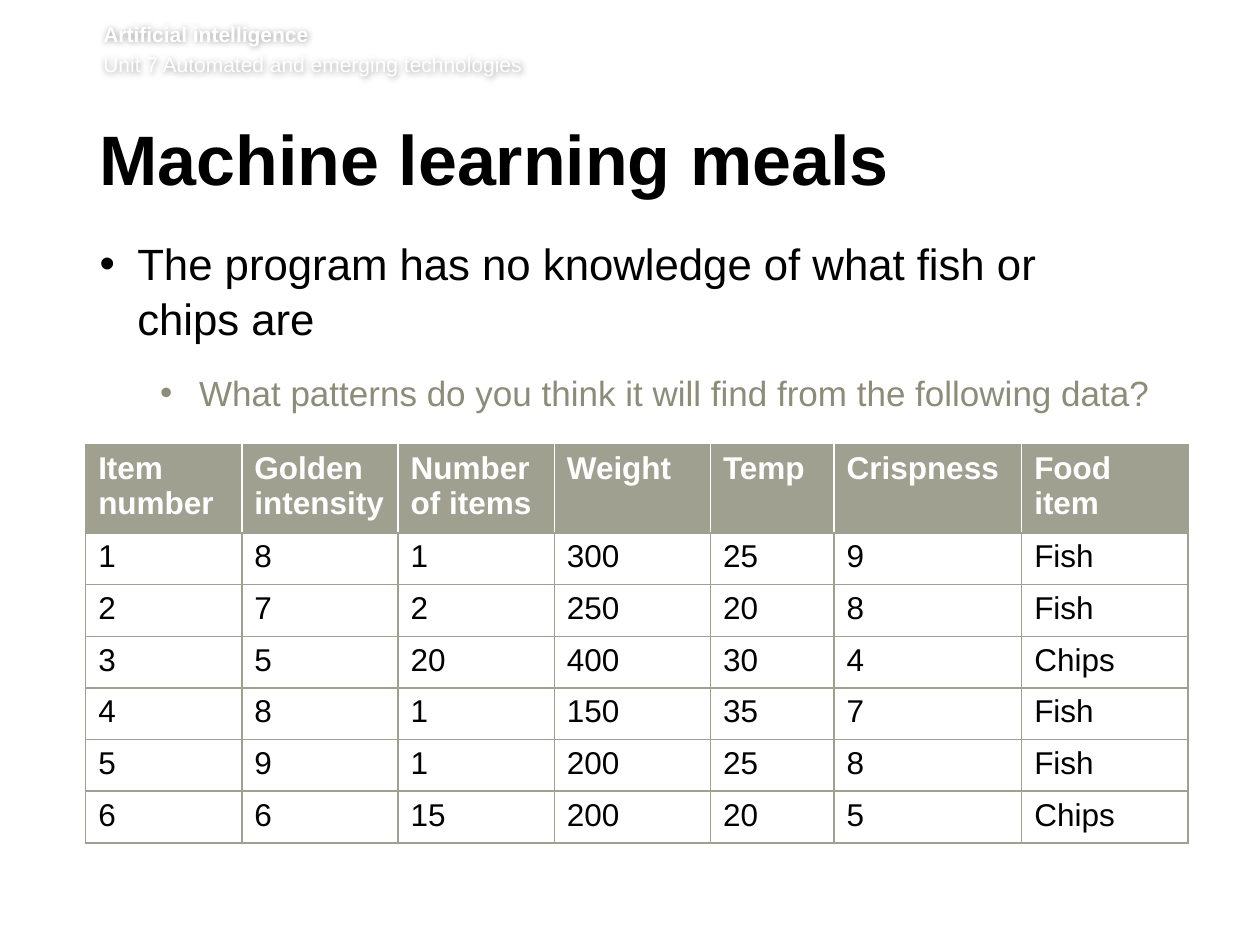
from lxml.etree import SubElement
from pptx import Presentation
from pptx.dml.color import RGBColor
from pptx.oxml.ns import qn
from pptx.util import Inches, Pt

COLORS = {"white": "FFFFFF", "black": "000000", "sage": "A0A090", "olive": "8C8C78"}


def add_text(paragraph, text, size, color, bold=False):
    run = paragraph.add_run()
    run.text = text
    run.font.name = "Arial"
    run.font.size = Pt(size)
    run.font.bold = bold
    run.font.color.rgb = RGBColor.from_string(COLORS[color])


def add_frame(left, top, width, height, insets):
    box = slide.shapes.add_textbox(Inches(left), Inches(top), Inches(width), Inches(height))
    frame = box.text_frame
    frame.word_wrap = True
    frame.margin_left, frame.margin_top, frame.margin_right, frame.margin_bottom = map(Inches, insets)
    return box, frame


prs = Presentation()
prs.slide_width, prs.slide_height = Inches(10), Inches(7.5)
slide = prs.slides.add_slide(prs.slide_layouts[6])

banner, banner_frame = add_frame(0.82, 0.17, 8.82, 0.49, (0, 0, 0, 0.05))
topic = banner_frame.paragraphs[0]
add_text(topic, "Artificial intelligence", 12, "white", True)
unit = banner_frame.add_paragraph()
unit.space_before = Pt(2.9)
add_text(unit, "Unit 7 Automated and emerging technologies", 12, "white")
effects = SubElement(banner.element.spPr, qn("a:effectLst"))
glow = SubElement(effects, qn("a:outerShdw"), blurRad="50800", dist="0", algn="ctr", rotWithShape="0")
glow_color = SubElement(glow, qn("a:srgbClr"), val=COLORS["black"])
SubElement(glow_color, qn("a:alpha"), val="40000")

_, title_frame = add_frame(0.79, 0.99, 8.55, 0.73, (0, 0.05, 0.1, 0.05))
title = title_frame.paragraphs[0]
title.line_spacing = Pt(39)
title.space_after = Pt(15)
add_text(title, "Machine learning meals", 40, "black", True)

_, body_frame = add_frame(0.79, 1.86, 8.53, 3.78, (0, 0, 0.1, 0.05))
statement = body_frame.paragraphs[0]
question = body_frame.add_paragraph()
question.level = 1
for bullet, margin, indent, after in ((statement, 0.3, -0.3, 14), (question, 0.79, -0.31, 12)):
    properties = bullet._p.get_or_add_pPr()
    properties.set("marL", str(Inches(margin)))
    properties.set("indent", str(Inches(indent)))
    SubElement(properties, qn("a:buFont"), typeface="Arial")
    SubElement(properties, qn("a:buChar"), char="•")
    bullet.line_spacing = 1.05
    bullet.space_after = Pt(after)
add_text(statement, "The program has no knowledge of what fish or ", 25, "black")
statement.add_line_break()
add_text(statement, "chips are", 25, "black")
add_text(question, "What patterns do you think it will find from the following data?", 20, "olive")

meals = [
    ("Item number", "Golden intensity", "Number of items", "Weight", "Temp", "Crispness", "Food item"),
    ("1", "8", "1", "300", "25", "9", "Fish"),
    ("2", "7", "2", "250", "20", "8", "Fish"),
    ("3", "5", "20", "400", "30", "4", "Chips"),
    ("4", "8", "1", "150", "35", "7", "Fish"),
    ("5", "9", "1", "200", "25", "8", "Fish"),
    ("6", "6", "15", "200", "20", "5", "Chips"),
]
widths = [1.24] * 4 + [0.98, 1.49, 1.32]
table = slide.shapes.add_table(
    len(meals), len(widths), Inches(0.68), Inches(3.53), Inches(sum(widths)), Inches(0.41 * len(meals))
).table
for column, width in zip(table.columns, widths):
    column.width = Inches(width)

last = len(widths) - 1
for r, meal in enumerate(meals):
    table.rows[r].height = Inches(0.41)
    header = r == 0
    for c, value in enumerate(meal):
        cell = table.cell(r, c)
        add_text(cell.text_frame.paragraphs[0], value, 18, "white" if header else "black", header)
        borders = {
            "a:lnL": "white" if header and c > 0 else "sage",
            "a:lnR": "white" if header and c < last else "sage",
            "a:lnT": "sage",
            "a:lnB": "sage",
        }
        for side, color in borders.items():
            line = SubElement(cell._tc.get_or_add_tcPr(), qn(side), w=str(Pt(1)))
            SubElement(SubElement(line, qn("a:solidFill")), qn("a:srgbClr"), val=COLORS[color])
        cell.fill.solid()
        cell.fill.fore_color.rgb = RGBColor.from_string(COLORS["sage" if header else "white"])

prs.save("out.pptx")
